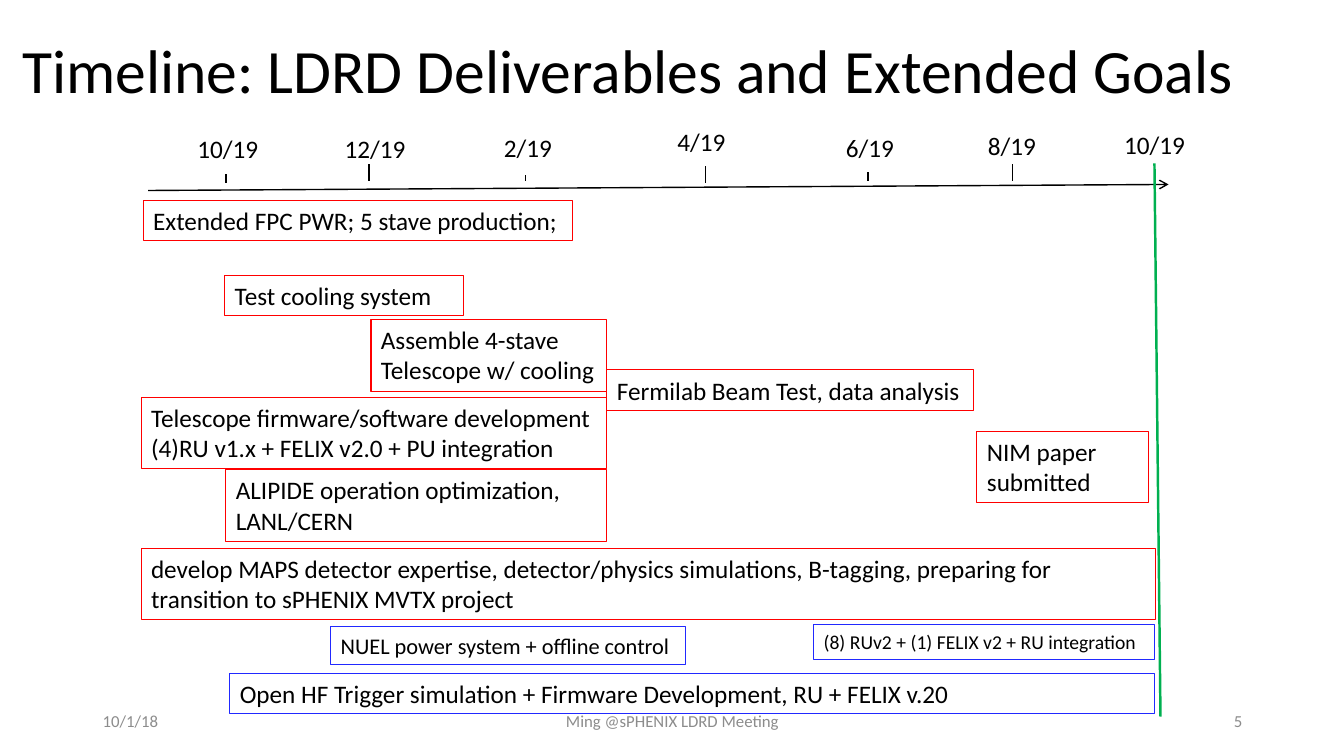
from typing import NamedTuple, Optional

from lxml.etree import SubElement
from pptx import Presentation
from pptx.dml.color import RGBColor
from pptx.enum.shapes import MSO_CONNECTOR
from pptx.enum.text import MSO_ANCHOR, MSO_AUTO_SIZE, PP_ALIGN
from pptx.oxml.ns import qn
from pptx.util import Emu, Pt

EMU_PER_PX = 9144  # 100 px to the inch
FONT = "Calibri"
BLACK, GRAY, RED, BLUE, GREEN = "000000", "8C8C8C", "FF0000", "2129FF", "00B050"


class Area(NamedTuple):
    left: int
    top: int
    width: int
    height: int


class Month(NamedTuple):
    label: str
    area: Area
    tick: Optional[tuple[int, int, int]] = None  # x, top, bottom


class Task(NamedTuple):
    text: str
    area: Area
    color: str = RED
    size: int = 18
    wrap: bool = True


class FooterItem(NamedTuple):
    text: str
    area: Area
    align: PP_ALIGN


MONTHS = [
    Month("10/19", Area(186, 127, 81, 40), (224, 173, 182)),
    Month("12/19", Area(332, 127, 81, 40), (366, 163, 180)),
    Month("2/19", Area(490, 126, 68, 40), (521, 174, 180)),
    Month("4/19", Area(662, 120, 68, 40), (700, 165, 182)),
    Month("6/19", Area(829, 126, 68, 40), (861, 171, 180)),
    Month("8/19", Area(970, 124, 68, 40), (1004, 163, 180)),
    Month("10/19", Area(1105, 123, 81, 40)),
]

TASKS = [
    Task("Extended FPC PWR; 5 stave production;", Area(142, 199, 426, 40)),
    Task("Test cooling system", Area(223, 273, 237, 40)),
    Task("Assemble 4-stave\nTelescope w/ cooling", Area(368, 317, 234, 71), wrap=False),
    Task("Fermilab Beam Test, data analysis", Area(602, 367, 364, 40)),
    Task("Telescope firmware/software development\n"
         "(4)RU v1.x + FELIX v2.0 + PU integration", Area(140, 394, 462, 71)),
    Task("NIM paper\nsubmitted", Area(969, 428, 170, 71)),
    Task("ALIPIDE operation optimization, LANL/CERN", Area(224, 466, 378, 71)),
    Task("develop MAPS detector expertise, detector/physics simulations, B-tagging, "
         "preparing for transition to sPHENIX MVTX project", Area(140, 544, 1006, 71)),
    Task("NUEL power system + offline control", Area(328, 622, 352, 37), BLUE, 16, False),
    Task("(8) RUv2 + (1) FELIX v2 + RU integration", Area(807, 620, 338, 34), BLUE, 14),
    Task("Open HF Trigger simulation + Firmware Development, RU + FELIX v.20",
         Area(228, 668, 917, 40), BLUE),
]

FOOTER = [
    FooterItem("10/1/18", Area(92, 695, 300, 40), PP_ALIGN.LEFT),
    FooterItem("Ming @sPHENIX LDRD Meeting", Area(442, 695, 450, 40), PP_ALIGN.CENTER),
    FooterItem("5", Area(942, 695, 300, 40), PP_ALIGN.RIGHT),
]


def px(length: int) -> Emu:
    return Emu(length * EMU_PER_PX)


def rgb(color: str) -> RGBColor:
    return RGBColor.from_string(color)


def write(frame, text: str, *, size: int = 18, color: str = BLACK, align=PP_ALIGN.LEFT,
          anchor=MSO_ANCHOR.TOP, wrap: bool = True, grow: bool = False,
          spacing: float = 1.0) -> None:
    """Fill a text frame, one paragraph for each line of text."""
    frame.text = text
    frame.word_wrap = wrap
    frame.vertical_anchor = anchor
    frame.auto_size = MSO_AUTO_SIZE.SHAPE_TO_FIT_TEXT if grow else MSO_AUTO_SIZE.NONE
    for paragraph in frame.paragraphs:
        paragraph.alignment = align
        paragraph.line_spacing = spacing
        for run in paragraph.runs:
            run.font.name = FONT
            run.font.size = Pt(size)
            run.font.color.rgb = rgb(color)


def add_text(slide, area: Area, text: str, *, border: Optional[str] = None, **text_format) -> None:
    box = slide.shapes.add_textbox(*map(px, area))
    if border:
        box.line.color.rgb = rgb(border)
        box.line.width = Pt(0.75)
    write(box.text_frame, text, **text_format)


def add_line(slide, start: tuple[int, int], end: tuple[int, int], *, color: str = BLACK,
             width: float = 1, arrow: bool = False) -> None:
    line = slide.shapes.add_connector(MSO_CONNECTOR.STRAIGHT, *map(px, start + end))
    line.line.color.rgb = rgb(color)
    line.line.width = Pt(width)
    if arrow:
        SubElement(line.line._get_or_add_ln(), qn("a:tailEnd"), type="arrow")
    SubElement(line._element.spPr, qn("a:effectLst"))


def add_title(slide, text: str) -> None:
    title = slide.shapes.title
    title.left, title.top, title.width, title.height = map(px, Area(12, 0, 1278, 145))
    write(title.text_frame, text, size=44, anchor=MSO_ANCHOR.MIDDLE, spacing=0.9)


def add_time_axis(slide) -> None:
    add_line(slide, (147, 189), (1159, 183), arrow=True)
    for month in MONTHS:
        add_text(slide, month.area, month.label, wrap=False, grow=True)
        if month.tick:
            x, top, bottom = month.tick
            add_line(slide, (x, top), (x, bottom))


def main() -> None:
    deck = Presentation()
    deck.slide_width, deck.slide_height = px(1333), px(750)
    slide = deck.slides.add_slide(deck.slide_layouts.get_by_name("Title Only"))

    add_title(slide, "Timeline: LDRD Deliverables and Extended Goals")
    add_time_axis(slide)
    for task in TASKS:
        add_text(slide, task.area, task.text, border=task.color, size=task.size,
                 wrap=task.wrap, grow=True)
    add_line(slide, (1145, 162), (1151, 711), color=GREEN, width=1.75)
    for item in FOOTER:
        add_text(slide, item.area, item.text, size=12, color=GRAY, align=item.align,
                 anchor=MSO_ANCHOR.MIDDLE)
    deck.save("out.pptx")


if __name__ == "__main__":
    main()
